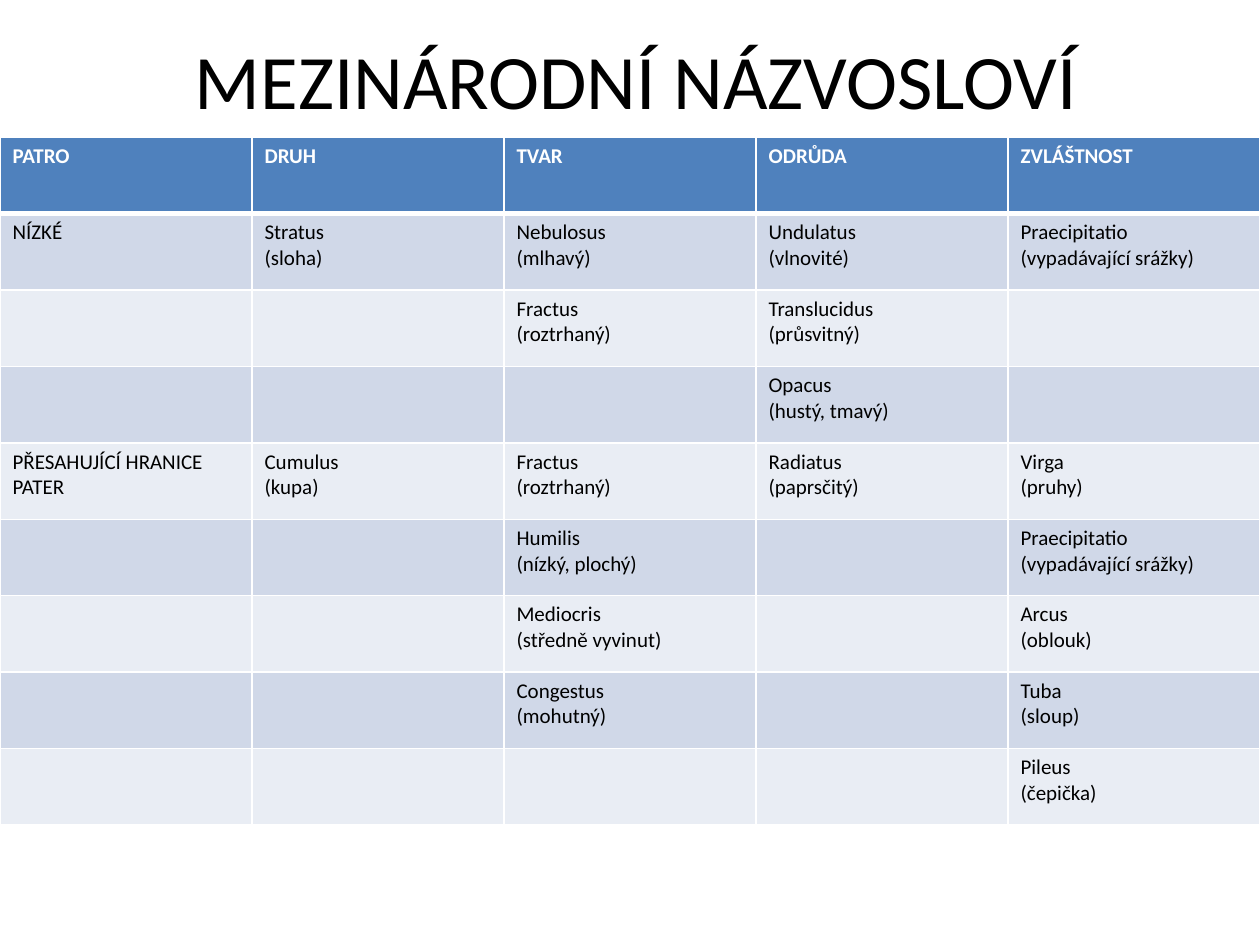
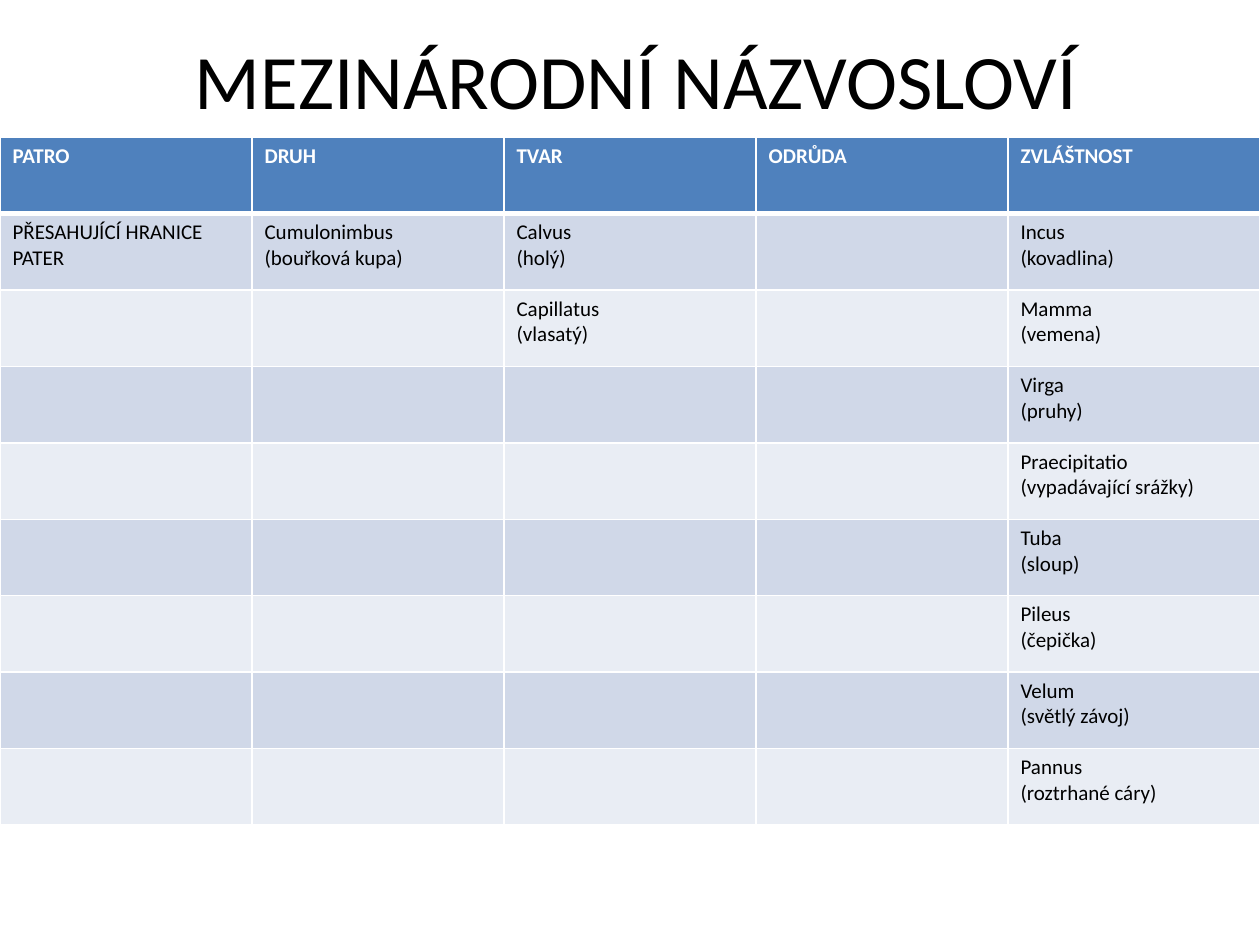
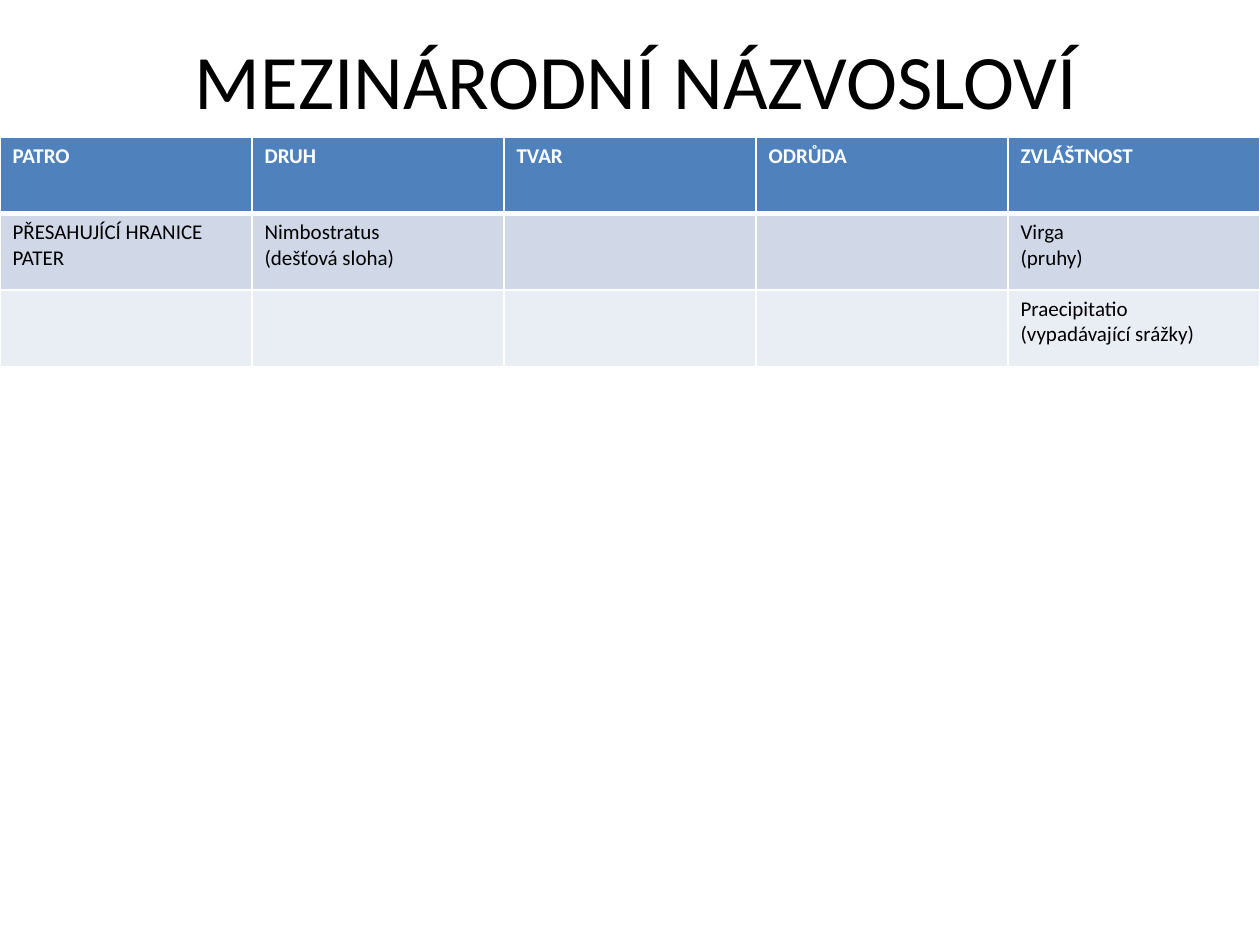
from collections import namedtuple
from dataclasses import dataclass

from lxml.etree import SubElement
from pptx import Presentation
from pptx.dml.color import RGBColor as RGB
from pptx.enum.text import MSO_ANCHOR as Anchor, PP_ALIGN as Align
from pptx.oxml.ns import qn
from pptx.util import Inches, Pt

Box = namedtuple("Box", "left top width height")


@dataclass(frozen=True)
class Theme:
    font: str = "Calibri"
    title_size: int = 44
    cell_size: int = 12
    ink: str = "000000"
    white: str = "FFFFFF"
    header: str = "4F81BD"
    bands: tuple = ("D0D8E8", "E9EDF4")
    rule: int = 1
    header_rule: int = 3


THEME = Theme()
TITLE = "MEZINÁRODNÍ NÁZVOSLOVÍ"
TITLE_BOX = Box(Inches(0.55), Inches(0), Inches(9), Inches(1.25))
TABLE_LEFT, TABLE_TOP, TABLE_WIDTH = Inches(0), Inches(1.09), Inches(10)
NINE_ROWS = Inches(5.46)
COLUMNS = ("PATRO", "DRUH", "TVAR", "ODRŮDA", "ZVLÁŠTNOST")

ABOVE_LEVELS = "PŘESAHUJÍCÍ HRANICE PATER"
RAGGED = "Fractus\n(roztrhaný)"
STREAKS = "Virga\n(pruhy)"
RAINFALL = "Praecipitatio\n(vypadávající srážky)"
COLUMN_CLOUD = "Tuba\n(sloup)"
CAP = "Pileus\n(čepička)"

CLOUD_TABLES = (
    (
        ("NÍZKÉ", "Stratus\n(sloha)", "Nebulosus\n(mlhavý)", "Undulatus\n(vlnovité)", RAINFALL),
        ("", "", RAGGED, "Translucidus\n(průsvitný)", ""),
        ("", "", "", "Opacus\n(hustý, tmavý)", ""),
        (ABOVE_LEVELS, "Cumulus\n(kupa)", RAGGED, "Radiatus\n(paprsčitý)", STREAKS),
        ("", "", "Humilis\n(nízký, plochý)", "", RAINFALL),
        ("", "", "Mediocris\n(středně vyvinut)", "", "Arcus\n(oblouk)"),
        ("", "", "Congestus\n(mohutný)", "", COLUMN_CLOUD),
        ("", "", "", "", CAP),
    ),
    (
        (ABOVE_LEVELS, "Cumulonimbus\n(bouřková kupa)", "Calvus\n(holý)", "",
         "Incus\n(kovadlina)"),
        ("", "", "Capillatus\n(vlasatý)", "", "Mamma\n(vemena)"),
        ("", "", "", "", STREAKS),
        ("", "", "", "", RAINFALL),
        ("", "", "", "", COLUMN_CLOUD),
        ("", "", "", "", CAP),
        ("", "", "", "", "Velum\n(světlý závoj)"),
        ("", "", "", "", "Pannus\n(roztrhané cáry)"),
    ),
    (
        (ABOVE_LEVELS, "Nimbostratus\n(dešťová sloha)", "", "", STREAKS),
        ("", "", "", "", RAINFALL),
    ),
)


def apply(target, values):
    for attribute, value in values.items():
        setattr(target, attribute, value)


def format_text(paragraphs, size, color, bold, align):
    for paragraph in paragraphs:
        paragraph.alignment = align
        apply(paragraph.font, {"name": THEME.font, "size": Pt(size), "bold": bold})
        paragraph.font.color.rgb = RGB.from_string(color)


def add_title(slide, box):
    title = slide.shapes.title
    apply(title, box._asdict())
    frame = title.text_frame
    apply(frame, {"text": TITLE, "vertical_anchor": Anchor.MIDDLE, "word_wrap": True})
    format_text(frame.paragraphs, THEME.title_size, THEME.ink, False, Align.CENTER)


def add_borders(cell, top, bottom):
    """Rule all four sides in white; must run before the cell is filled."""
    properties = cell._tc.get_or_add_tcPr()
    for side, width in {"L": THEME.rule, "R": THEME.rule, "T": top, "B": bottom}.items():
        line = SubElement(properties, qn(f"a:ln{side}"), w=str(Pt(width)))
        SubElement(SubElement(line, qn("a:solidFill")), qn("a:srgbClr"), val=THEME.white)


def fill_cell(cell, text, row):
    is_header = row == 0
    add_borders(cell,
                top=THEME.header_rule if row == 1 else THEME.rule,
                bottom=THEME.header_rule if is_header else THEME.rule)
    cell.fill.solid()
    cell.fill.fore_color.rgb = RGB.from_string(
        THEME.header if is_header else THEME.bands[(row - 1) % 2])
    cell.text = text
    format_text(cell.text_frame.paragraphs, THEME.cell_size,
                THEME.white if is_header else THEME.ink, is_header, Align.LEFT)


def add_cloud_table(slide, box, rows):
    table = slide.shapes.add_table(len(rows), len(COLUMNS), *box).table
    for column in table.columns:
        column.width = box.width // len(COLUMNS)
    for row, texts in enumerate(rows):
        table.rows[row].height = box.height // len(rows)
        for column, text in enumerate(texts):
            fill_cell(table.cell(row, column), text, row)


def add_cloud_slide(deck, clouds):
    slide = deck.slides.add_slide(deck.slide_layouts.get_by_name("Title Only"))
    rows = (COLUMNS, *clouds)
    add_title(slide, TITLE_BOX)
    height = NINE_ROWS * len(rows) // 9
    add_cloud_table(slide, Box(TABLE_LEFT, TABLE_TOP, TABLE_WIDTH, height), rows)


def main():
    deck = Presentation()
    apply(deck, {"slide_width": Inches(10), "slide_height": Inches(7.5)})
    for clouds in CLOUD_TABLES:
        add_cloud_slide(deck, clouds)
    deck.save("out.pptx")


if __name__ == "__main__":
    main()
